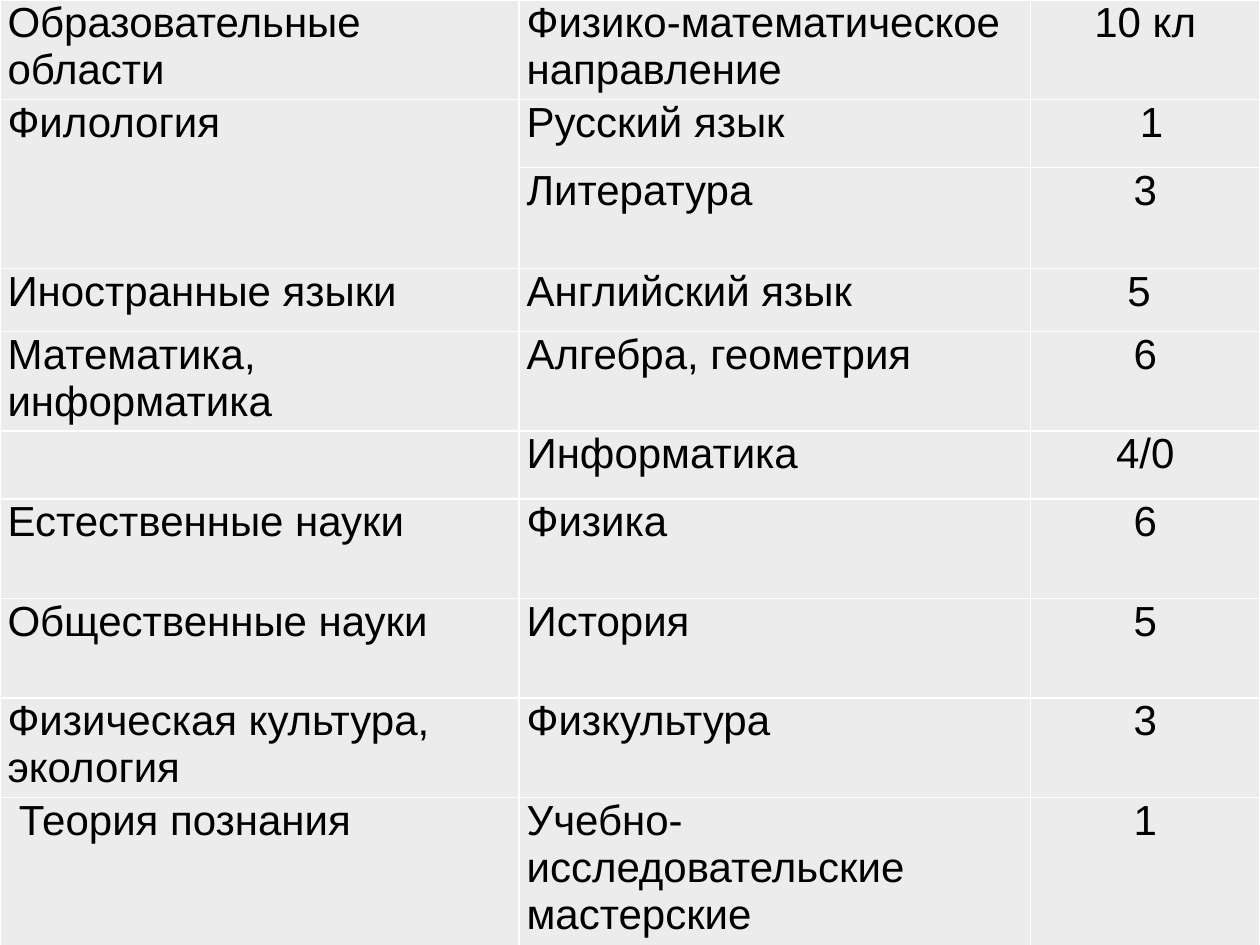
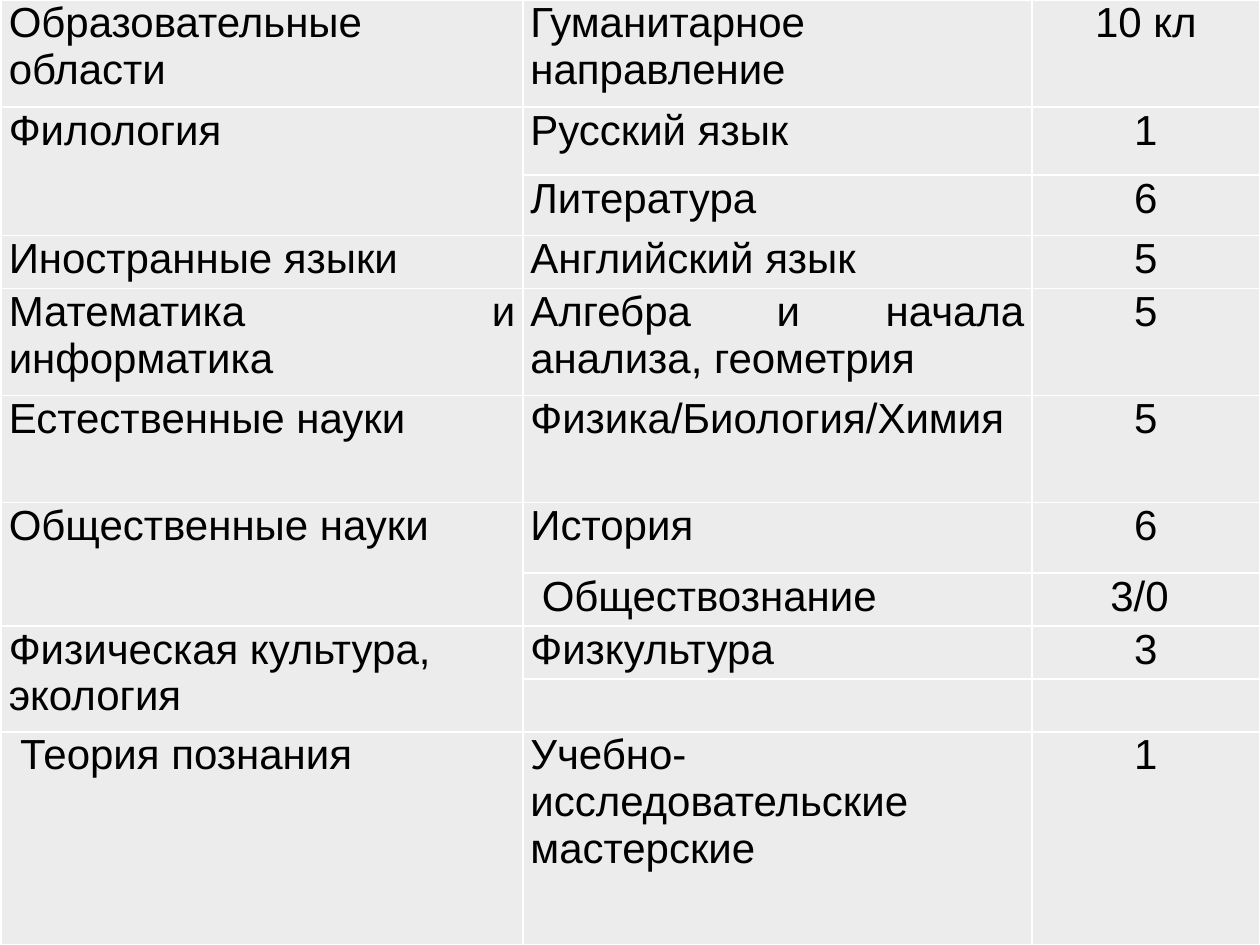
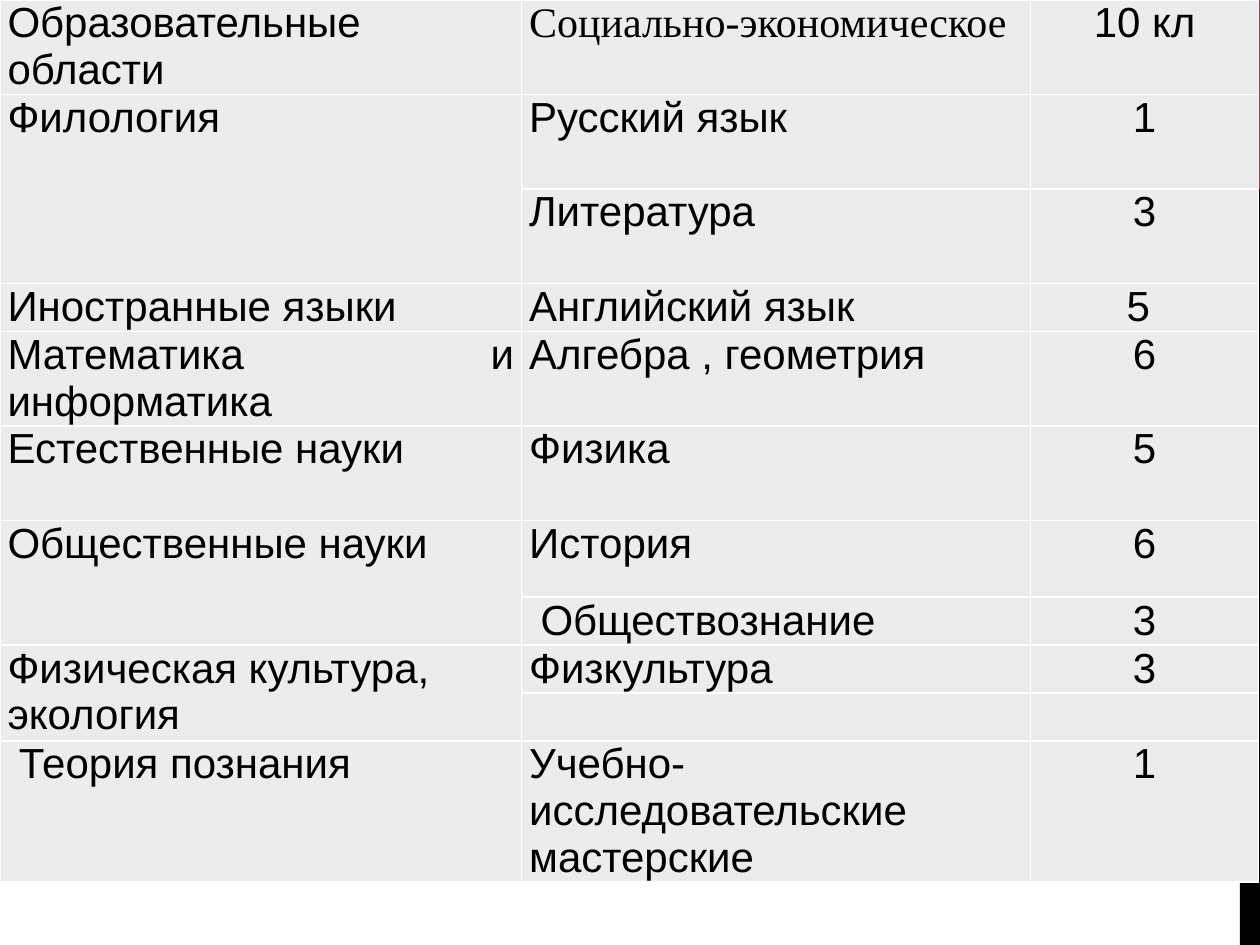
import lxml.etree
import pptx
import pptx.dml.color
import pptx.enum.shapes
import pptx.enum.text
import pptx.oxml.ns
import pptx.util

INK, CELL_GREY, BORDER_WHITE, BAND_RED = "000000", "ECECEC", "FFFFFF", "D1282E"
SIDE_MARGIN = 0.06
FONT, FONT_SIZE = "Arial", 24
ALIGN = pptx.enum.text.PP_ALIGN
COLUMN_ALIGNMENTS = [ALIGN.JUSTIFY, ALIGN.JUSTIFY, ALIGN.CENTER]
LEFT_ALIGNED = {"История", "Физическая культура, экология"}
INDENTED = {"Теория познания", "Обществознание"}
SERIF = {"Социально-экономическое"}


def paint(color_holder, hex_color):
    """Give a fill a solid colour."""
    color_holder.solid()
    color_holder.fore_color.rgb = pptx.dml.color.RGBColor.from_string(hex_color)


def add_cell_borders(cell):
    """Draw all four sides of a cell as 1 pt lines."""
    properties = cell._tc.get_or_add_tcPr()
    for position, side in enumerate(["lnL", "lnR", "lnT", "lnB"]):
        line = lxml.etree.Element(pptx.oxml.ns.qn(f"a:{side}"), w="12700")
        fill = lxml.etree.SubElement(line, pptx.oxml.ns.qn("a:solidFill"))
        lxml.etree.SubElement(fill, pptx.oxml.ns.qn("a:srgbClr"), val=BORDER_WHITE)
        properties.insert(position, line)


# Each row: height, area (None continues the area above), subject, hours.
# "shifts" moves the hours of a row sideways by that many inches.
CURRICULA = [
    {
        "left": 0,
        "columns": [4.12, 4.06, 1.82],
        "shifts": {1: 0.05, 3: -0.05},
        "rows": [
            (0.79, "Образовательные области", "Физико-математическое направление", "10 кл"),
            (0.54, "Филология", "Русский язык", "1"),
            (0.8, None, "Литература", "3"),
            (0.5, "Иностранные языки", "Английский язык", "5"),
            (0.79, "Математика, информатика", "Алгебра, геометрия", "6"),
            (0.54, "", "Информатика", "4/0"),
            (0.79, "Естественные науки", "Физика", "6"),
            (0.79, "Общественные науки", "История", "5"),
            (0.79, "Физическая культура, экология", "Физкультура", "3"),
            (1.18, "Теория познания", "Учебно-исследовательские мастерские", "1"),
        ],
    },
    {
        "left": 0.01,
        "columns": [4.14, 4.04, 1.81],
        "shifts": {7: -0.05},
        "rows": [
            (0.85, "Образовательные области", "Гуманитарное направление", "10 кл"),
            (0.54, "Филология", "Русский язык", "1"),
            (0.48, None, "Литература", "6"),
            (0.42, "Иностранные языки", "Английский язык", "5"),
            (0.85, "Математика и информатика", "Алгебра и начала анализа, геометрия", "5"),
            (0.85, "Естественные науки", "Физика/Биология/Химия", "5"),
            (0.56, "Общественные науки", "История", "6"),
            (0.42, None, "Обществознание", "3/0"),
            (0.42, "Физическая культура, экология", "Физкультура", "3"),
            (0.42, None, "", ""),
            (1.69, "Теория познания", "Учебно-исследовательские мастерские", "1"),
        ],
    },
    {
        "left": 0,
        "columns": [4.14, 4.04, 1.81],
        "shifts": {3: -0.05},
        "rows": [
            (0.75, "Образовательные области", "Социально-экономическое", "10 кл"),
            (0.75, "Филология", "Русский язык", "1"),
            (0.75, None, "Литература", "3"),
            (0.38, "Иностранные языки", "Английский язык", "5"),
            (0.75, "Математика и информатика", "Алгебра , геометрия", "6"),
            (0.75, "Естественные науки", "Физика", "5"),
            (0.61, "Общественные науки", "История", "6"),
            (0.38, None, "Обществознание", "3"),
            (0.38, "Физическая культура, экология", "Физкультура", "3"),
            (0.38, None, "", ""),
            (1.12, "Теория познания", "Учебно-исследовательские мастерские", "1"),
        ],
    },
]

presentation = pptx.Presentation()
presentation.slide_width = pptx.util.Inches(10)
presentation.slide_height = pptx.util.Inches(7.5)
blank_layout = presentation.slide_layouts[6]
slides = [presentation.slides.add_slide(blank_layout) for _ in CURRICULA]

# The side bands belong to the master, so every slide shares them.
for top, height, color in [(0, 1.5, BAND_RED), (1.5, 6, INK)]:
    band = slides[0].shapes.add_shape(
        pptx.enum.shapes.MSO_SHAPE.RECTANGLE,
        *map(pptx.util.Inches, (9.84, top, 0.16, height)))
    band.shadow.inherit = False
    paint(band.fill, color)
    band.line.fill.background()
    presentation.slide_master.shapes.element.append(band.element)

for slide, curriculum in zip(slides, CURRICULA):
    rows, columns = curriculum["rows"], curriculum["columns"]
    table_height = sum(row[0] for row in rows)
    table = slide.shapes.add_table(
        len(rows), len(columns),
        *map(pptx.util.Inches, (curriculum["left"], 0, sum(columns), table_height))).table
    table.first_row = False
    table.horz_banding = False
    for column, width in zip(table.columns, columns):
        column.width = pptx.util.Inches(width)

    for row_index, (height, *texts) in enumerate(rows):
        table.rows[row_index].height = pptx.util.Inches(height)
        for column_index, text in enumerate(texts):
            cell = table.cell(row_index, column_index)
            shift = curriculum["shifts"].get(row_index, 0) if column_index == 2 else 0
            indent = 0.09 if text in INDENTED else 0
            cell.margin_left = pptx.util.Inches(SIDE_MARGIN + indent + max(2 * shift, 0))
            cell.margin_right = pptx.util.Inches(SIDE_MARGIN + max(-2 * shift, 0))
            cell.margin_top = cell.margin_bottom = 0
            paint(cell.fill, CELL_GREY)
            add_cell_borders(cell)
            if text is None:
                table.cell(row_index - 1, column_index).merge(cell)
            elif text:
                cell.text_frame.text = text
                paragraph = cell.text_frame.paragraphs[0]
                paragraph.alignment = (
                    ALIGN.LEFT if text in LEFT_ALIGNED else COLUMN_ALIGNMENTS[column_index])
                font = paragraph.runs[0].font
                font.name = "Times New Roman" if text in SERIF else FONT
                font.size = pptx.util.Pt(FONT_SIZE)
                paint(font.fill, INK)

presentation.save("out.pptx")
